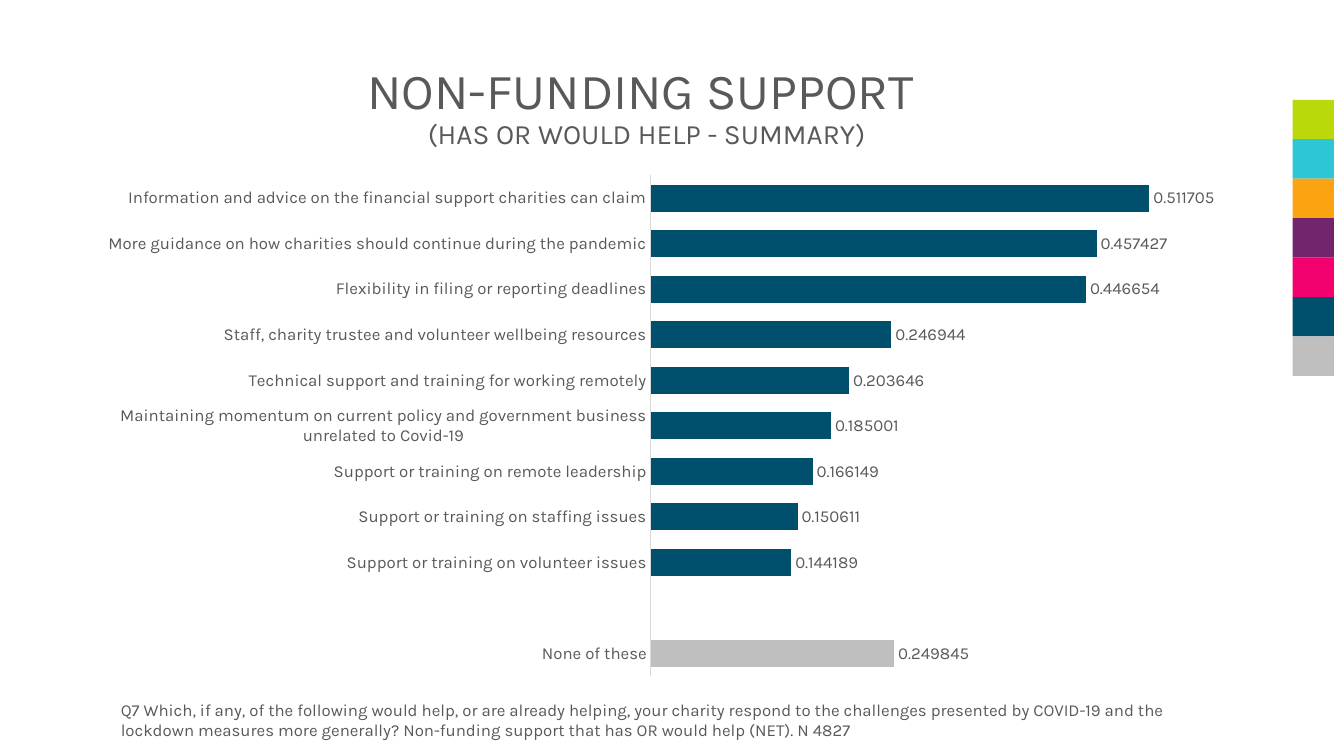
"""Builds the non-funding support slide with its bar chart."""
from dataclasses import dataclass
from typing import Optional

from lxml.etree import SubElement
from pptx import Presentation
from pptx.chart.chart import Chart
from pptx.chart.data import CategoryChartData
from pptx.dml.color import RGBColor
from pptx.enum.chart import XL_CHART_TYPE, XL_LABEL_POSITION, XL_TICK_LABEL_POSITION, XL_TICK_MARK
from pptx.enum.shapes import MSO_SHAPE
from pptx.enum.text import MSO_ANCHOR, MSO_AUTO_SIZE, PP_ALIGN
from pptx.oxml.ns import qn
from pptx.slide import Slide
from pptx.text.text import Font, TextFrame
from pptx.util import Inches, Pt


@dataclass(frozen=True)
class Theme:
    font: str = "Karla"
    text: str = "595959"
    axis: str = "D9D9D9"
    bar: str = "004F6D"
    muted: str = "BFBFBF"
    title_size: int = 36
    subtitle_size: int = 20
    body_size: int = 12
    swatches: tuple[str, ...] = (
        "BAD80A", "2DC6D6", "FCA311", "72246C", "F2006E", "004F6D", "BFBFBF")


@dataclass(frozen=True)
class Box:
    left: float
    top: float
    width: float
    height: float

    def lengths(self) -> tuple[int, int, int, int]:
        return Inches(self.left), Inches(self.top), Inches(self.width), Inches(self.height)


@dataclass(frozen=True)
class Answer:
    label: str
    share: Optional[float]


THEME = Theme()
TITLE_BOX = Box(3.45, 0.35, 5.93, 1.45)
CHART_BOX = Box(0.71, 1.57, 11.92, 5.31)
PLOT_BOX = Box(6.455, 1.74, 5.8, 4.97)
QUESTION_BOX = Box(1.1, 6.89, 10.63, 0.5)
SWATCH_STRIP = Box(12.82, 0.99, 0.41, 2.74)
ANSWERS = (
    Answer("None of these", 0.249845),
    Answer("", None),
    Answer("Support or training on volunteer issues", 0.144189),
    Answer("Support or training on staffing issues", 0.150611),
    Answer("Support or training on remote leadership", 0.166149),
    Answer("Maintaining momentum on current policy and government business "
           "unrelated to Covid-19", 0.185001),
    Answer("Technical support and training for working remotely", 0.203646),
    Answer("Staff, charity trustee and volunteer wellbeing resources", 0.246944),
    Answer("Flexibility in filing or reporting deadlines", 0.446654),
    Answer("More guidance on how charities should continue during the pandemic", 0.457427),
    Answer("Information and advice on the financial support charities can claim", 0.511705),
)
QUESTION = (
    "Q7 Which, if any, of the following would help, or are already helping, your charity "
    "respond to the challenges presented by COVID-19 and the lockdown measures more "
    "generally? Non-funding support that has OR would help (NET). N 4827")


def style_font(font: Font, size: int) -> None:
    font.name = THEME.font
    font.size = Pt(size)
    font.bold = False
    font.color.rgb = RGBColor.from_string(THEME.text)


def write_text(frame: TextFrame, *lines: tuple[str, int],
               align: PP_ALIGN = PP_ALIGN.LEFT, anchor: MSO_ANCHOR = MSO_ANCHOR.TOP,
               line_spacing: float = 1.0) -> None:
    frame.word_wrap = True
    frame.auto_size = MSO_AUTO_SIZE.NONE
    frame.vertical_anchor = anchor
    paragraph = frame.paragraphs[0]
    paragraph.alignment = align
    paragraph.line_spacing = line_spacing
    for index, (text, size) in enumerate(lines):
        if index:
            paragraph.add_line_break()
        run = paragraph.add_run()
        run.text = text
        style_font(run.font, size)


def add_swatches(slide: Slide) -> None:
    left, top, width, strip_height = SWATCH_STRIP.lengths()
    height = strip_height // len(THEME.swatches)
    for row, color in enumerate(THEME.swatches):
        swatch = slide.shapes.add_shape(
            MSO_SHAPE.RECTANGLE, left, top + row * height, width, height)
        swatch.shadow.inherit = False
        swatch.fill.solid()
        swatch.fill.fore_color.rgb = RGBColor.from_string(color)
        swatch.line.fill.background()


def place_plot(chart: Chart) -> None:
    plot_area = chart.plots[0]._element.getparent()
    layout = plot_area.find(qn("c:layout"))
    if layout is None:
        layout = SubElement(plot_area, qn("c:layout"))
        plot_area.insert(0, layout)
    manual = SubElement(layout, qn("c:manualLayout"))
    settings = {
        "layoutTarget": "inner", "xMode": "edge", "yMode": "edge",
        "x": (PLOT_BOX.left - CHART_BOX.left) / CHART_BOX.width,
        "y": (PLOT_BOX.top - CHART_BOX.top) / CHART_BOX.height,
        "w": PLOT_BOX.width / CHART_BOX.width,
        "h": PLOT_BOX.height / CHART_BOX.height,
    }
    for name, value in settings.items():
        SubElement(manual, qn(f"c:{name}")).set("val", str(value))


def add_support_chart(slide: Slide) -> None:
    support = CategoryChartData()
    support.categories = [answer.label for answer in ANSWERS]
    support.add_series("Series 1", [answer.share for answer in ANSWERS])
    chart = slide.shapes.add_chart(
        XL_CHART_TYPE.BAR_CLUSTERED, *CHART_BOX.lengths(), support).chart
    style_font(chart.font, THEME.body_size)
    chart.has_legend = False
    chart.has_title = False
    place_plot(chart)

    answers_axis = chart.category_axis
    answers_axis.major_tick_mark = XL_TICK_MARK.NONE
    answers_axis.minor_tick_mark = XL_TICK_MARK.NONE
    answers_axis.tick_label_position = XL_TICK_LABEL_POSITION.NEXT_TO_AXIS
    answers_axis.has_major_gridlines = False
    answers_axis.format.line.color.rgb = RGBColor.from_string(THEME.axis)
    answers_axis.format.line.width = Pt(0.75)
    style_font(answers_axis.tick_labels.font, THEME.body_size)

    share_axis = chart.value_axis
    share_axis.minimum_scale = 0
    share_axis.maximum_scale = 0.6
    share_axis.has_major_gridlines = False
    share_axis.visible = False

    bars = chart.plots[0]
    bars.gap_width = 70
    bars.vary_by_categories = False
    shares = bars.series[0]
    shares.format.fill.solid()
    shares.format.fill.fore_color.rgb = RGBColor.from_string(THEME.bar)
    none_bar = shares.points[0].format.fill
    none_bar.solid()
    none_bar.fore_color.rgb = RGBColor.from_string(THEME.muted)
    labels = shares.data_labels
    labels.show_value = True
    labels.number_format = "General"
    labels.number_format_is_linked = False
    labels.position = XL_LABEL_POSITION.OUTSIDE_END
    style_font(labels.font, THEME.body_size)


def main() -> None:
    deck = Presentation()
    deck.slide_width, deck.slide_height = Inches(13.33), Inches(7.5)
    slide = deck.slides.add_slide(deck.slide_layouts.get_by_name("Title Only"))
    add_swatches(slide)
    title = slide.shapes.title
    title.left, title.top, title.width, title.height = TITLE_BOX.lengths()
    write_text(title.text_frame, ("NON-FUNDING SUPPORT ", THEME.title_size),
               ("(HAS OR WOULD HELP - SUMMARY)", THEME.subtitle_size),
               align=PP_ALIGN.CENTER, anchor=MSO_ANCHOR.MIDDLE, line_spacing=0.9)
    add_support_chart(slide)
    question = slide.shapes.add_textbox(*QUESTION_BOX.lengths())
    write_text(question.text_frame, (QUESTION, THEME.body_size))
    deck.save("out.pptx")


if __name__ == "__main__":
    main()
